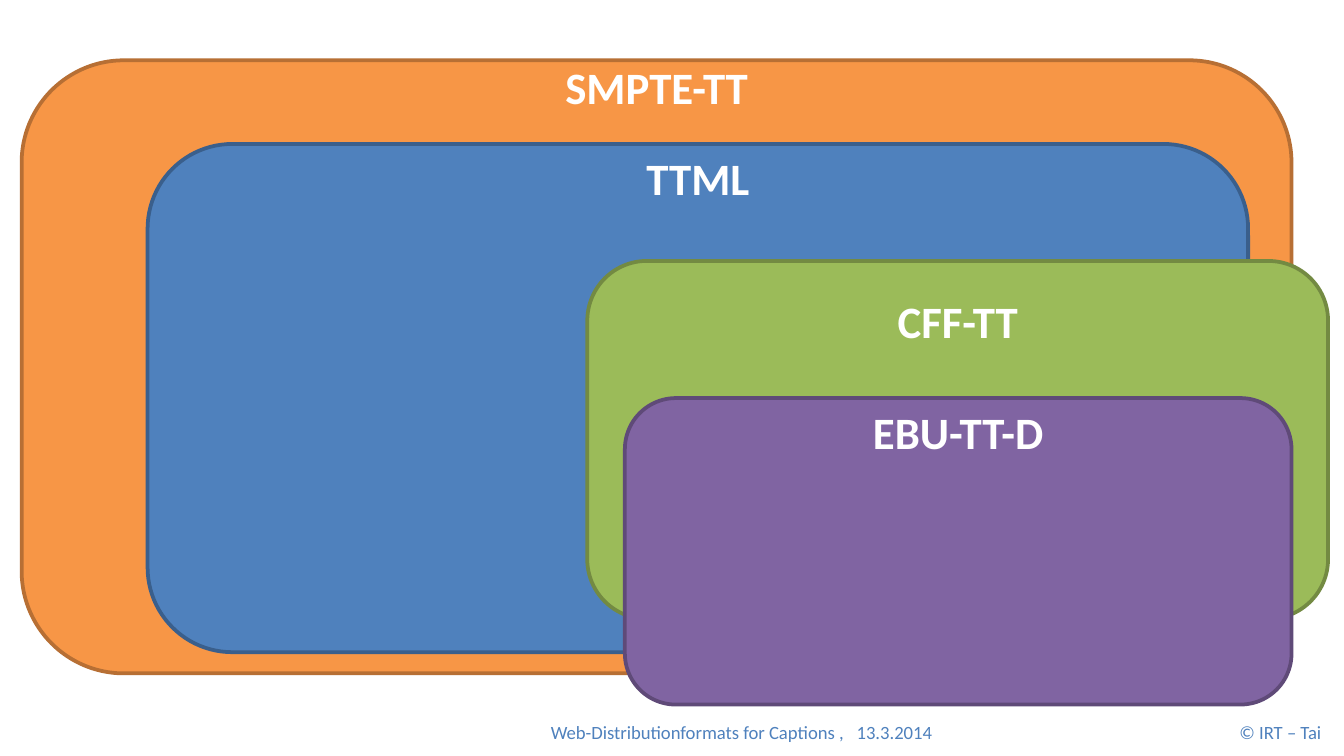
import pptx
import pptx.util
import pptx.dml.color
import pptx.enum.shapes
import pptx.enum.text
import pptx.oxml
import pptx.oxml.ns

Cm = pptx.util.Cm
Pt = pptx.util.Pt
ALIGN = pptx.enum.text.PP_ALIGN

FONT = "Calibri"
WHITE = "FFFFFF"
BLUE = "4F81BD"
LABEL_HEIGHT = 1.03

# Name, left, top, width, height, label top (cm), fill, outline
FORMATS = [
    ("SMPTE-TT", 0.41, 1.14, 24, 11.58, 1.13, "F79646", "B76F34"),
    ("TTML", 2.79, 2.72, 20.8, 9.6, 2.85, BLUE, "3A5F8C"),
    ("CFF-TT", 11.1, 4.93, 14, 6.76, 5.55, "9BBB59", "738A42"),
    ("EBU-TT-D", 11.81, 7.52, 12.6, 5.79, 7.65, "8064A2", "5F4A78"),
]


def color(hex_value):
    return pptx.dml.color.RGBColor.from_string(hex_value)


def add_text(slide, text, left, top, width, height, size, hex_color,
             align=ALIGN.LEFT, bold=False, inset=0, tab=None):
    """Add one line of text, with an optional tab stop in cm."""
    sp = slide.shapes.add_textbox(Cm(left), Cm(top), Cm(width), Cm(height))
    tf = sp.text_frame
    tf.word_wrap = True
    tf.margin_left = tf.margin_right = Cm(inset)
    tf.margin_top = tf.margin_bottom = Cm(inset)
    p = tf.paragraphs[0]
    p.text = text
    p.alignment = align
    if tab is not None:
        p._p.get_or_add_pPr().append(pptx.oxml.parse_xml(
            f'<a:tabLst {pptx.oxml.ns.nsdecls("a")}>'
            f'<a:tab pos="{Cm(tab)}" algn="l"/></a:tabLst>'))
    p.font.name = FONT
    p.font.size = Pt(size)
    p.font.bold = bold
    p.font.color.rgb = color(hex_color)


def add_format(slide, name, left, top, width, height, label_top, fill, line):
    """Add a rounded area with its name near the upper edge."""
    sp = slide.shapes.add_shape(
        pptx.enum.shapes.MSO_SHAPE.ROUNDED_RECTANGLE,
        Cm(left), Cm(top), Cm(width), Cm(height))
    sp.shadow.inherit = False
    sp.fill.solid()
    sp.fill.fore_color.rgb = color(fill)
    sp.line.color.rgb = color(line)
    sp.line.width = Pt(2)
    add_text(slide, name, left, label_top, width, LABEL_HEIGHT, 24, WHITE,
             align=ALIGN.CENTER, bold=True)


def add_footer(slide):
    add_text(slide, "Web-Distributionformats for Captions ,\t13.3.2014",
             10.31, 13.51, 7.59, 0.64, 10, BLUE, inset=0.1, tab=5.78)
    add_text(slide, "© IRT – Tai", 22.5, 13.51, 2.57, 0.64, 10, BLUE,
             align=ALIGN.RIGHT, inset=0.1)


def main():
    prs = pptx.Presentation()
    prs.slide_width, prs.slide_height = Cm(25.4), Cm(14.28)
    slide = prs.slides.add_slide(prs.slide_layouts[6])

    # Footer
    add_footer(slide)

    # Overlapping caption formats, from back to front
    for row in FORMATS:
        add_format(slide, *row)

    prs.save("out.pptx")


if __name__ == "__main__":
    main()
